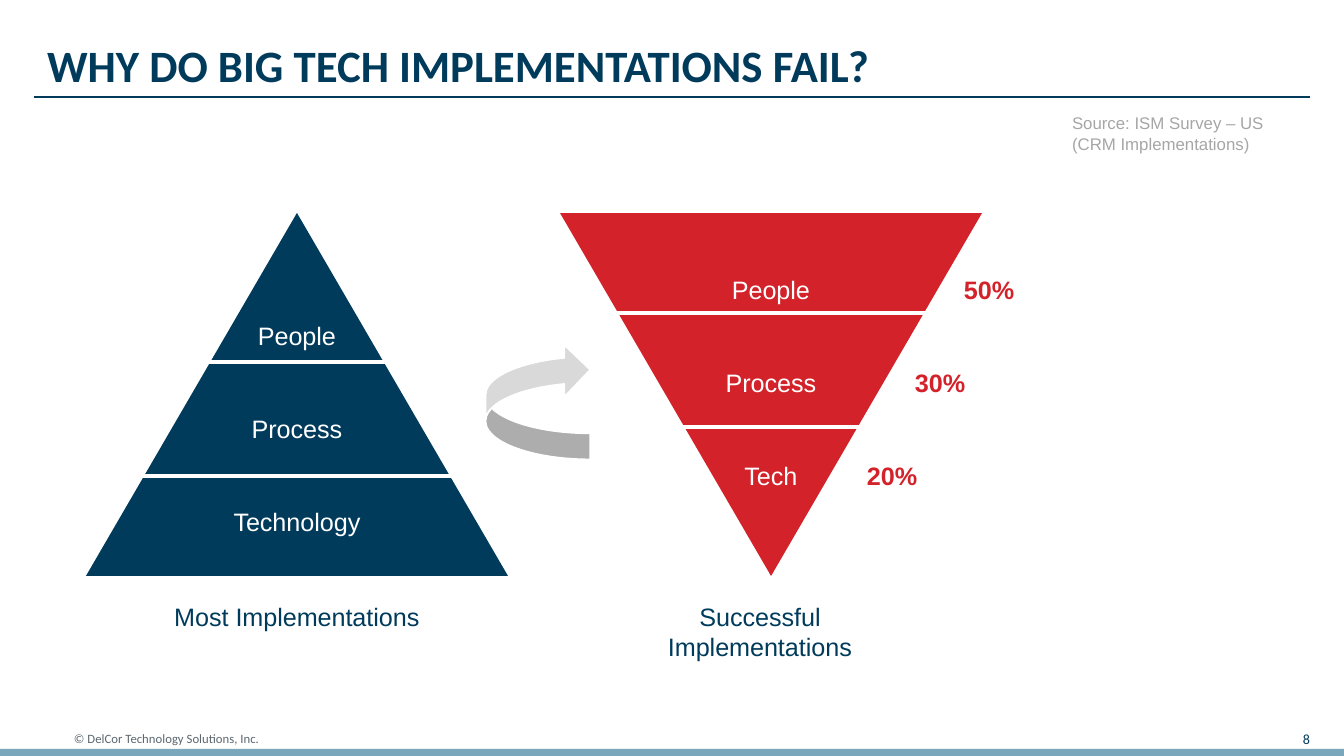
"""Build the slide comparing most and successful technology implementations."""
import pptx
import pptx.dml.color
import pptx.enum.shapes
import pptx.enum.text
import pptx.oxml.ns
import pptx.util
from lxml import etree

PX = 9144000 / 1344
NAVY = pptx.dml.color.RGBColor(0x00, 0x3B, 0x5C)
RED = pptx.dml.color.RGBColor(0xD3, 0x22, 0x2A)
BLUE = pptx.dml.color.RGBColor(0x7B, 0xA7, 0xBC)
SLATE = pptx.dml.color.RGBColor(0x5B, 0x67, 0x70)
GRAY = pptx.dml.color.RGBColor(0xA6, 0xA6, 0xA6)
SILVER = pptx.dml.color.RGBColor(0xD9, 0xD9, 0xD9)
WHITE = pptx.dml.color.RGBColor(0xFF, 0xFF, 0xFF)
SHAPE = pptx.enum.shapes.MSO_SHAPE
ALIGN = pptx.enum.text.PP_ALIGN
ANCHOR = pptx.enum.text.MSO_ANCHOR

deck = pptx.Presentation()
deck.slide_width, deck.slide_height = round(1344 * PX), round(756 * PX)
page = deck.slides.add_slide(deck.slide_layouts[6])


def add_text(place, lines, size, color, font="Arial", bold=False, align=ALIGN.LEFT,
             inset=(3, 3), anchor=ANCHOR.TOP, spacing=1.0, gap=0, indents=(0, 0, 0)):
    box = page.shapes.add_textbox(*(round(value * PX) for value in place))
    frame = box.text_frame
    frame.word_wrap = True
    frame.vertical_anchor = anchor
    frame.margin_left = frame.margin_right = round(inset[0] * PX)
    frame.margin_top = frame.margin_bottom = round(inset[1] * PX)
    frame.text = "\n".join(lines)
    for index, para in enumerate(frame.paragraphs):
        para.alignment = align
        para.line_spacing = spacing
        if index:
            para.space_before = pptx.util.Pt(gap)
        if indents[index]:
            para._p.get_or_add_pPr().set("marL", str(round(indents[index] * PX)))
        para.font.name = font
        para.font.size = pptx.util.Pt(size)
        para.font.bold = bold
        para.font.color.rgb = color


def add_line(left, right, y, color, width):
    line = page.shapes.add_connector(
        pptx.enum.shapes.MSO_CONNECTOR.STRAIGHT,
        *(round(value * PX) for value in (left, y, right, y)))
    line.line.color.rgb = color
    line.line.width = pptx.util.Pt(width)
    etree.SubElement(line._element.spPr, pptx.oxml.ns.qn("a:effectLst"))


shapes = (
    (SHAPE.RECTANGLE, (0, 749, 1344, 7), BLUE, 0),
    (SHAPE.ISOSCELES_TRIANGLE, (86, 213, 422, 363), NAVY, 0),
    (SHAPE.ISOSCELES_TRIANGLE, (560, 213, 422, 363), RED, 180),
    (SHAPE.CURVED_DOWN_ARROW, (480, 349, 116, 105), SILVER, 270),
)
for kind, place, color, turn in shapes:
    shape = page.shapes.add_shape(kind, *(round(value * PX) for value in place))
    shape.shadow.inherit = False
    shape.rotation = turn
    shape.fill.solid()
    shape.fill.fore_color.rgb = color
    if kind == SHAPE.CURVED_DOWN_ARROW:
        shape.line.color.rgb = WHITE
        shape.line.width = pptx.util.Pt(1)
    else:
        shape.line.fill.background()

add_line(34, 1310, 97, NAVY, 1)
for left, y in ((113, 362), (128, 476), (602, 313), (617, 427)):
    add_line(left, left + 338, y, WHITE, 2.25)

add_text((34, 20, 1265, 74), ["WHY DO BIG TECH IMPLEMENTATIONS FAIL?"], 24, NAVY,
         font="Calibri", bold=True, inset=(13, 7), spacing=1.2)
add_text((1059, 106, 239, 54), ["Source: ISM Survey – US (CRM Implementations)"], 9, GRAY,
         inset=(13, 7))

for place, caption in (((128, 598, 338, 43), "Most Implementations"),
                       ((635, 598, 250, 43), "Successful Implementations")):
    add_text(place, [caption], 13.5, NAVY, align=ALIGN.CENTER)

for left, top, last in ((128, 302, "Technology"), (602, 256, "Tech")):
    add_text((left, top, 338, 260), ["People", "Process", last], 13.5, WHITE,
             align=ALIGN.CENTER, spacing=1.5, gap=25.5)
add_text((864, 256, 318, 260), ["50%", "30%", "20%"], 13.5, RED, bold=True,
         spacing=1.5, gap=25.5, indents=(97, 48, 0))

add_text((74, 727, 258, 23), ["© DelCor Technology Solutions, Inc."], 6.8, SLATE,
         font="Calibri", inset=(0, 0), anchor=ANCHOR.MIDDLE)
add_text((1262, 727, 48, 23), ["8"], 7.5, NAVY, font="Calibri", align=ALIGN.RIGHT,
         inset=(0, 0), anchor=ANCHOR.MIDDLE)

deck.save("out.pptx")
